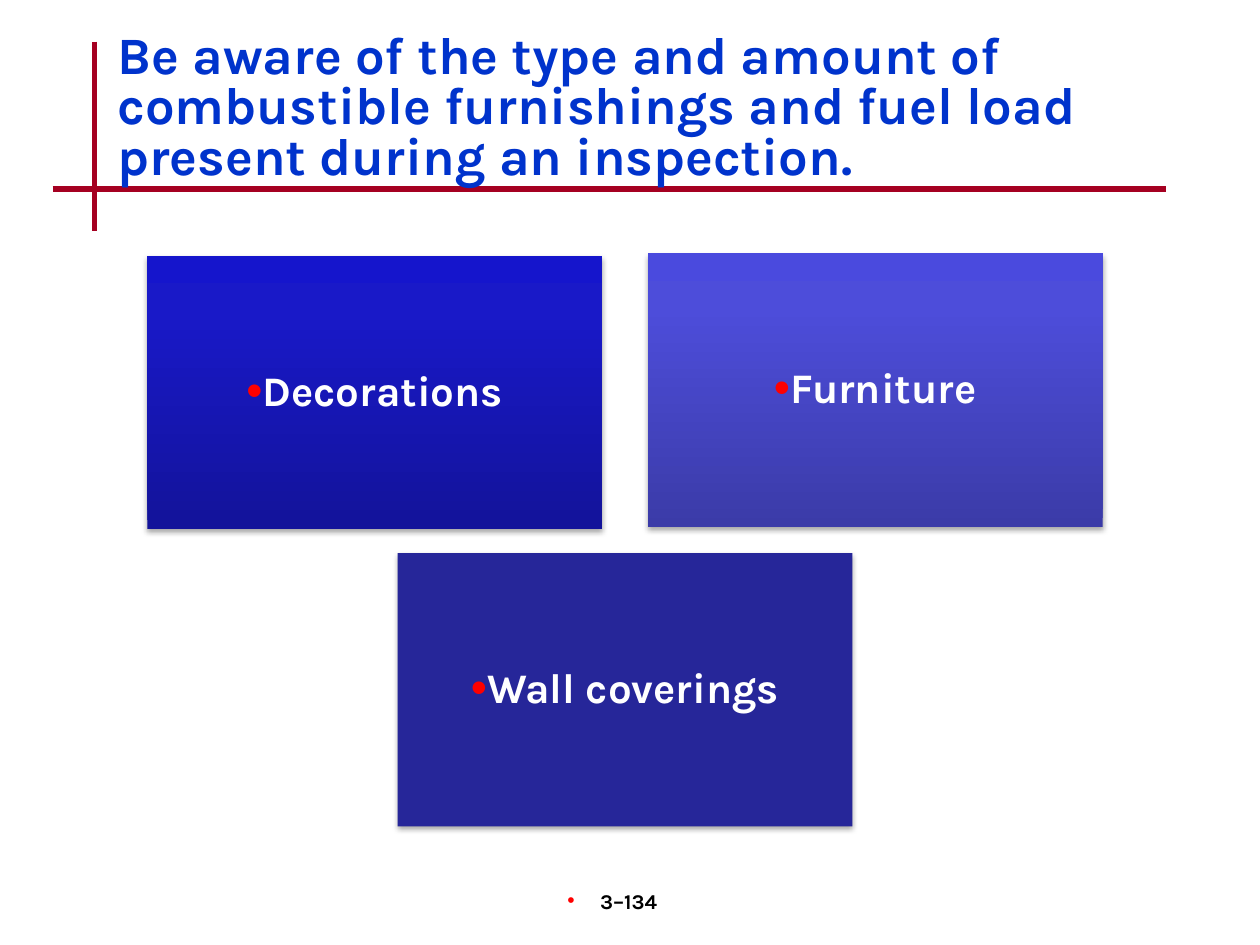
from lxml import etree
from pptx import Presentation
from pptx.dml.color import RGBColor
from pptx.enum.shapes import MSO_CONNECTOR, MSO_SHAPE
from pptx.enum.text import MSO_ANCHOR, MSO_AUTO_SIZE, PP_ALIGN
from pptx.oxml import parse_xml
from pptx.oxml.ns import nsdecls, qn
from pptx.util import Cm, Pt

# Content
TITLE = ("Be aware of the type and amount of combustible furnishings "
         "and fuel load present during an inspection.")
PAGE_NUMBER = "3–134"
# Rows of cards: label, top in cm, gradient stops from the bottom up
CARD_ROWS = [
    [("Decorations", 5.16, [(0, "13139A"), (80, "1919C8"), (100, "1515CC")]),
     ("Furniture", 5.11, [(0, "3B3BA8"), (80, "4D4DDA"), (100, "4A4ADE")])],
    [("Wall coverings", 11.15, [(0, "262699"), (100, "262699")])],
]
# Crossed rules: start x, start y, end x, end y in cm
RULES = [(1.9, 0.84, 1.9, 4.65), (1.06, 3.81, 23.5, 3.81)]

THEME = {
    "font": "Karla",
    "title": "0033CC", "rule": "A50021", "bullet": "FF0000",
    "card_text": "FFFFFF", "page_text": "000000",
    "title_size": 30, "card_size": 24, "page_size": 12,
}
CARD_WIDTH, CARD_HEIGHT, CARD_GAP, CARDS_CENTER = 9.17, 5.51, 0.92, 12.6


def add_bullet(paragraph, margin=0.0, indent=0.0, percent=100):
    props = paragraph._p.get_or_add_pPr()
    props.set("marL", str(Cm(margin)))
    props.set("indent", str(Cm(indent)))
    color = etree.SubElement(props, qn("a:buClr"))
    etree.SubElement(color, qn("a:srgbClr"), val=THEME["bullet"])
    etree.SubElement(props, qn("a:buSzPct"), val=str(percent * 1000))
    etree.SubElement(props, qn("a:buFont"), typeface="Arial")
    etree.SubElement(props, qn("a:buChar"), char="•")


def add_text(paragraph, text, role, align, line_spacing=1.0):
    paragraph.alignment = align
    paragraph.line_spacing = line_spacing
    run = paragraph.add_run()
    run.text = text
    run.font.name = THEME["font"]
    run.font.size = Pt(THEME[f"{role}_size"])
    run.font.bold = True
    color = THEME["title"] if role == "title" else THEME[f"{role}_text"]
    run.font.color.rgb = RGBColor.from_string(color)


def fill_card(card, stops):
    if len({color for _, color in stops}) == 1:
        card.fill.solid()
        card.fill.fore_color.rgb = RGBColor.from_string(stops[0][1])
    else:
        stop_xml = "".join(
            f'<a:gs pos="{pos * 1000}"><a:srgbClr val="{color}"/></a:gs>'
            for pos, color in stops)
        card._element.spPr.find(qn("a:prstGeom")).addnext(parse_xml(
            f'<a:gradFill {nsdecls("a")} rotWithShape="1"><a:gsLst>{stop_xml}'
            '</a:gsLst><a:lin ang="16200000" scaled="0"/></a:gradFill>'))
    card.line.fill.background()


def add_soft_shadow(card):
    card.shadow.inherit = False
    effects = card._element.spPr.find(qn("a:effectLst"))
    effects.append(parse_xml(
        f'<a:outerShdw {nsdecls("a")} blurRad="{Pt(3.1)}" dist="{Pt(1.8)}" '
        'dir="5400000" rotWithShape="0"><a:srgbClr val="000000">'
        '<a:alpha val="35000"/></a:srgbClr></a:outerShdw>'))


def add_card(slide, left, top, label, stops):
    card = slide.shapes.add_shape(
        MSO_SHAPE.RECTANGLE, Cm(left), Cm(top), Cm(CARD_WIDTH), Cm(CARD_HEIGHT))
    fill_card(card, stops)
    add_soft_shadow(card)
    frame = card.text_frame
    frame.word_wrap = True
    frame.vertical_anchor = MSO_ANCHOR.MIDDLE
    frame.margin_left = frame.margin_right = Cm(0.25)
    frame.margin_top = frame.margin_bottom = Cm(0.25)
    paragraph = frame.paragraphs[0]
    add_bullet(paragraph, percent=110)
    paragraph.space_after = Pt(8.4)
    add_text(paragraph, label, "card", PP_ALIGN.CENTER, 0.9)


def main():
    presentation = Presentation()
    presentation.slide_width, presentation.slide_height = Cm(25.4), Cm(19.05)
    slide = presentation.slides.add_slide(presentation.slide_layouts[5])

    # Crossed rules
    for start_x, start_y, end_x, end_y in RULES:
        rule = slide.shapes.add_connector(
            MSO_CONNECTOR.STRAIGHT, Cm(start_x), Cm(start_y), Cm(end_x), Cm(end_y))
        rule.line.color.rgb = RGBColor.from_string(THEME["rule"])
        rule.line.width = Pt(3)
        etree.SubElement(rule._element.spPr, qn("a:effectLst"))

    # Cards, each row centred on the same axis
    for row in CARD_ROWS:
        row_width = len(row) * (CARD_WIDTH + CARD_GAP) - CARD_GAP
        for column, (label, top, stops) in enumerate(row):
            left = CARDS_CENTER - row_width / 2 + column * (CARD_WIDTH + CARD_GAP)
            add_card(slide, left, top, label, stops)

    # Title, in front of the rules
    title = slide.shapes.title
    title.left, title.top, title.width, title.height = (
        Cm(2.11), Cm(0.56), Cm(21.59), Cm(2.54))
    title.text_frame.word_wrap = True
    title.text_frame.auto_size = MSO_AUTO_SIZE.NONE
    title.text_frame.vertical_anchor = MSO_ANCHOR.TOP
    add_text(title.text_frame.paragraphs[0], TITLE, "title", PP_ALIGN.LEFT, 0.8)
    slide.shapes._spTree.append(title._element)

    # Page number
    page_box = slide.shapes.add_textbox(Cm(9.96), Cm(17.78), Cm(5.28), Cm(1.27))
    page_box.text_frame.word_wrap = True
    page_line = page_box.text_frame.paragraphs[0]
    add_bullet(page_line, margin=0.15, indent=-0.66)
    add_text(page_line, PAGE_NUMBER, "page", PP_ALIGN.CENTER)

    presentation.save("out.pptx")


if __name__ == "__main__":
    main()
